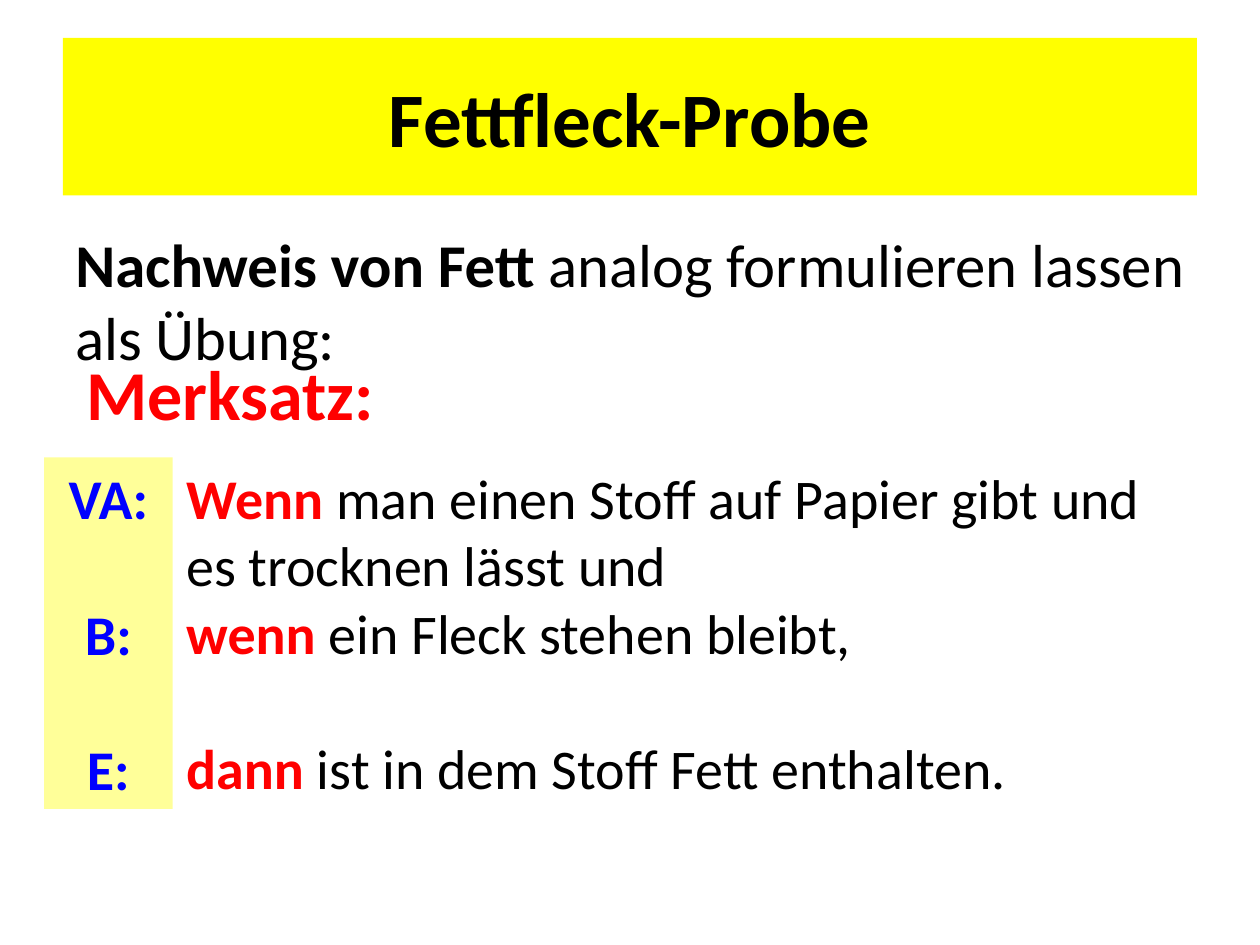
"""Build the slide on the grease spot test."""
from pptx import Presentation
from pptx.dml.color import RGBColor
from pptx.enum.shapes import MSO_SHAPE
from pptx.enum.text import MSO_ANCHOR, PP_ALIGN
from pptx.util import Inches, Pt

BLACK = RGBColor(0x00, 0x00, 0x00)
RED = RGBColor(0xFF, 0x00, 0x00)
BLUE = RGBColor(0x00, 0x00, 0xFF)
YELLOW = RGBColor(0xFF, 0xFF, 0x00)
PALE_YELLOW = RGBColor(0xFF, 0xFF, 0x99)
RECTANGLE = MSO_SHAPE.RECTANGLE
TOP, MIDDLE = MSO_ANCHOR.TOP, MSO_ANCHOR.MIDDLE
LEFT, CENTER = PP_ALIGN.LEFT, PP_ALIGN.CENTER
RULE_SIZE = 32
RULE_LINE = 39


class SlideBuilder:
    """Holds the font and the current slide and adds its elements."""

    def __init__(self, slide, font="Calibri"):
        self.slide = slide
        self.font = font

    def fill_text(self, shape, paragraphs, size, align, anchor):
        """Fill a shape with (space before, runs) paragraphs."""
        frame = shape.text_frame
        frame.word_wrap = True
        frame.vertical_anchor = anchor
        for index, (gap, runs) in enumerate(paragraphs):
            paragraph = frame.add_paragraph() if index else frame.paragraphs[0]
            paragraph.alignment = align
            paragraph.space_before = Pt(gap)
            for text, color, bold in runs:
                run = paragraph.add_run()
                run.text = text
                run.font.name = self.font
                run.font.size = Pt(size)
                run.font.bold = bold
                run.font.color.rgb = color

    def text(self, box, paragraphs, size):
        """Add left-aligned text without a background."""
        shape = self.slide.shapes.add_textbox(*map(Inches, box))
        self.fill_text(shape, paragraphs, size, LEFT, TOP)

    def panel(self, box, fill, paragraphs, size, anchor):
        """Add a filled rectangle with centred text."""
        shape = self.slide.shapes.add_shape(RECTANGLE, *map(Inches, box))
        shape.shadow.inherit = False
        shape.fill.solid()
        shape.fill.fore_color.rgb = fill
        shape.line.fill.background()
        self.fill_text(shape, paragraphs, size, CENTER, anchor)


def main():
    """Create and save the presentation."""
    presentation = Presentation()
    presentation.slide_width = Inches(10)
    presentation.slide_height = Inches(7.5)
    slide = presentation.slides.add_slide(presentation.slide_layouts[6])
    builder = SlideBuilder(slide)

    title = [(0, [("Fettfleck-Probe", BLACK, True)])]
    builder.panel((0.5, 0.3, 9, 1.25), YELLOW, title, 44, MIDDLE)

    task = [(0, [("Nachweis von Fett ", BLACK, True),
                 ("analog formulieren lassen als Übung:", BLACK, False)])]
    builder.text((0.5, 1.75, 9, 1.36), task, 34.7)

    heading = [(0, [("Merksatz:", RED, True)])]
    builder.text((0.59, 2.73, 9.13, 0.77), heading, 40)

    rule = [
        (0, [("Wenn", RED, True),
             (" man einen Stoff auf Papier gibt und", BLACK, False)]),
        (0, [("es trocknen lässt und", BLACK, False)]),
        (0, [("wenn", RED, True), (" ein Fleck stehen bleibt,", BLACK, False)]),
        (RULE_LINE, [("dann", RED, True),
                     (" ist in dem Stoff Fett enthalten.", BLACK, False)]),
    ]
    builder.text((1.38, 3.63, 8.66, 2.79), rule, RULE_SIZE)

    steps = [(RULE_LINE if index else 0, [(label, BLUE, True)])
             for index, label in enumerate(("VA:", "B:", "E:"))]
    builder.panel((0.35, 3.63, 1.02, 2.79), PALE_YELLOW, steps, RULE_SIZE, TOP)

    presentation.save("out.pptx")


if __name__ == "__main__":
    main()
